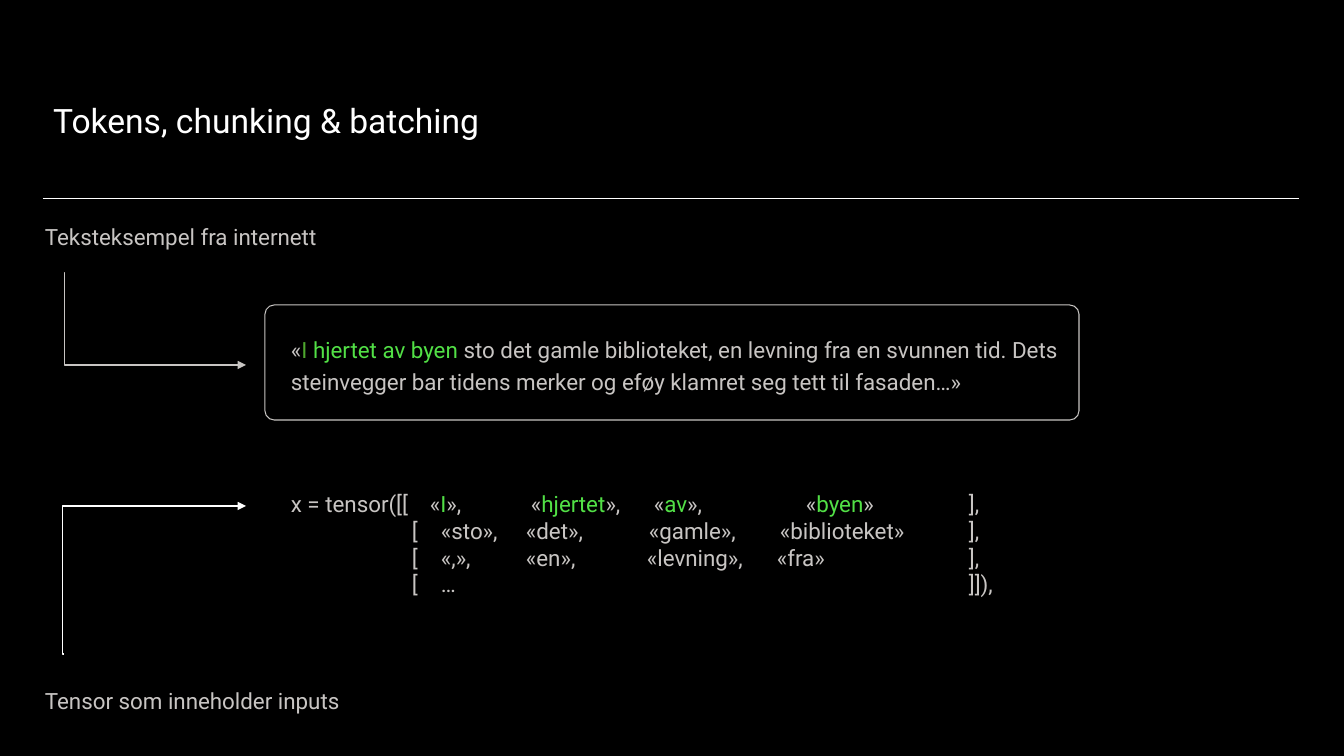
from dataclasses import dataclass

from lxml import etree
from pptx import Presentation
from pptx import util as u
from pptx.dml.color import RGBColor
from pptx.enum import shapes, text
from pptx.oxml.ns import qn


@dataclass(frozen=True)
class Theme:
    font: str = "Roboto"
    back: str = "000000"
    white: str = "FFFFFF"
    gray: str = "C8C5C3"
    lime: str = "52E046"
    moss: str = "4EA72E"
    head: int = 24
    body: int = 16


def px(n):
    return u.Emu(round(n * 12192000 / 1344))


def rgb(code):
    return RGBColor.from_string(code)


class Deck:
    def __init__(self, theme):
        self.theme = theme
        self.prs = Presentation()
        self.prs.slide_width, self.prs.slide_height = px(1344), px(756)
        self.slide = self.prs.slides.add_slide(self.prs.slide_layouts[5])
        fill = self.slide.background.fill
        fill.solid()
        fill.fore_color.rgb = rgb(theme.back)

    def run(self, para, words, size, color):
        run = para.add_run()
        run.text = words
        run.font.name = self.theme.font
        run.font.size = u.Pt(size)
        run.font.color.rgb = rgb(color)

    def title(self, words, x, y, w, h):
        box = self.slide.shapes.title
        box.left, box.top, box.width, box.height = map(px, (x, y, w, h))
        frame = box.text_frame
        frame.vertical_anchor = text.MSO_ANCHOR.MIDDLE
        para = frame.paragraphs[0]
        para.alignment = text.PP_ALIGN.LEFT
        para.line_spacing = 0.9
        self.run(para, words, self.theme.head, self.theme.white)

    def text(self, rows, x, y, w, h, space=1.0, stops=()):
        """Each row is a list of (words, color); stops holds tab places per row."""
        box = self.slide.shapes.add_textbox(*map(px, (x, y, w, h)))
        frame = box.text_frame
        frame.word_wrap = True
        frame.auto_size = text.MSO_AUTO_SIZE.SHAPE_TO_FIT_TEXT
        for i, row in enumerate(rows):
            para = frame.add_paragraph() if i else frame.paragraphs[0]
            if stops:
                self.tabs(para, stops[i])
            para.line_spacing = space
            for words, color in row:
                self.run(para, words, self.theme.body, color)

    def tabs(self, para, stops):
        tabs = etree.SubElement(para._p.get_or_add_pPr(), qn("a:tabLst"))
        for stop in stops:
            etree.SubElement(tabs, qn("a:tab"), pos=str(px(stop)), algn="l")

    def frame(self, x, y, w, h, color):
        box = self.slide.shapes.add_shape(
            shapes.MSO_SHAPE.ROUNDED_RECTANGLE, *map(px, (x, y, w, h)))
        box.adjustments[0] = 0.08
        box.shadow.inherit = False
        box.fill.background()
        box.line.color.rgb = rgb(color)
        box.line.width = u.Pt(0)

    def line(self, kind, ends, color, width):
        line = self.slide.shapes.add_connector(kind, *map(px, ends))
        line.line.color.rgb = rgb(color)
        line.line.width = u.Pt(width)
        etree.SubElement(line._element.spPr, qn("a:effectLst"))
        return line

    def arrow(self, ends, color, bend):
        """Elbow arrow that turns at bend, in thousandths of a percent."""
        line = self.line(shapes.MSO_CONNECTOR.ELBOW, ends, color, 1)
        props = line._element.spPr
        guides = props.find(qn("a:prstGeom")).get_or_add_avLst()
        etree.SubElement(guides, qn("a:gd"), name="adj1", fmla=f"val {bend}")
        etree.SubElement(props.find(qn("a:ln")), qn("a:tailEnd"), type="triangle")


def main():
    theme = Theme()
    gray, lime = theme.gray, theme.lime
    deck = Deck(theme)
    deck.title("Tokens, chunking & batching", 43, 102, 1256, 41)
    deck.line(shapes.MSO_CONNECTOR.STRAIGHT, (43, 198, 1299, 198), theme.white, 0.5)

    quote = [("«", gray), ("I ", theme.moss), ("hjertet av byen ", lime),
             ("sto det gamle biblioteket, en levning fra en svunnen tid. "
              "Dets steinvegger bar tidens merker og eføy klamret seg tett "
              "til fasaden…»", gray)]
    deck.text([quote], 281, 326, 805, 73, space=1.2)
    deck.frame(265, 305, 814, 115, gray)
    for label, y in (("Teksteksempel fra internett", 218),
                     ("Tensor som inneholder inputs", 682)):
        deck.text([[(label, gray)]], 35, y, 422, 37)
    deck.arrow((64, 273, 246, 365), gray, 300)
    deck.arrow((63, 654, 246, 506), theme.white, -300)

    first = [("x = tensor([[", gray)]
    for word, close in (("I", "»,"), ("hjertet", "»,"), ("av", "»,"), ("byen", "»")):
        first += [("\t«", gray), (word, lime), (close, gray)]
    rest = ("\t[\t«sto»,\t«det»,\t«gamle»,\t«biblioteket»",
            "\t[\t«,»,\t«en»,\t«levning»,\t«fra»",
            "\t[\t…")
    stops = ((139, 240, 363, 515),
             (121, 150, 235, 358, 489),
             (121, 150, 235, 356, 486),
             (121, 150))
    deck.text([first] + [[(row, gray)] for row in rest], 281, 485, 1047, 119, stops=stops)
    deck.text([[(end, gray)] for end in ("],", "],", "],", "]]),")], 959, 485, 187, 119)
    deck.prs.save("out.pptx")


if __name__ == "__main__":
    main()
